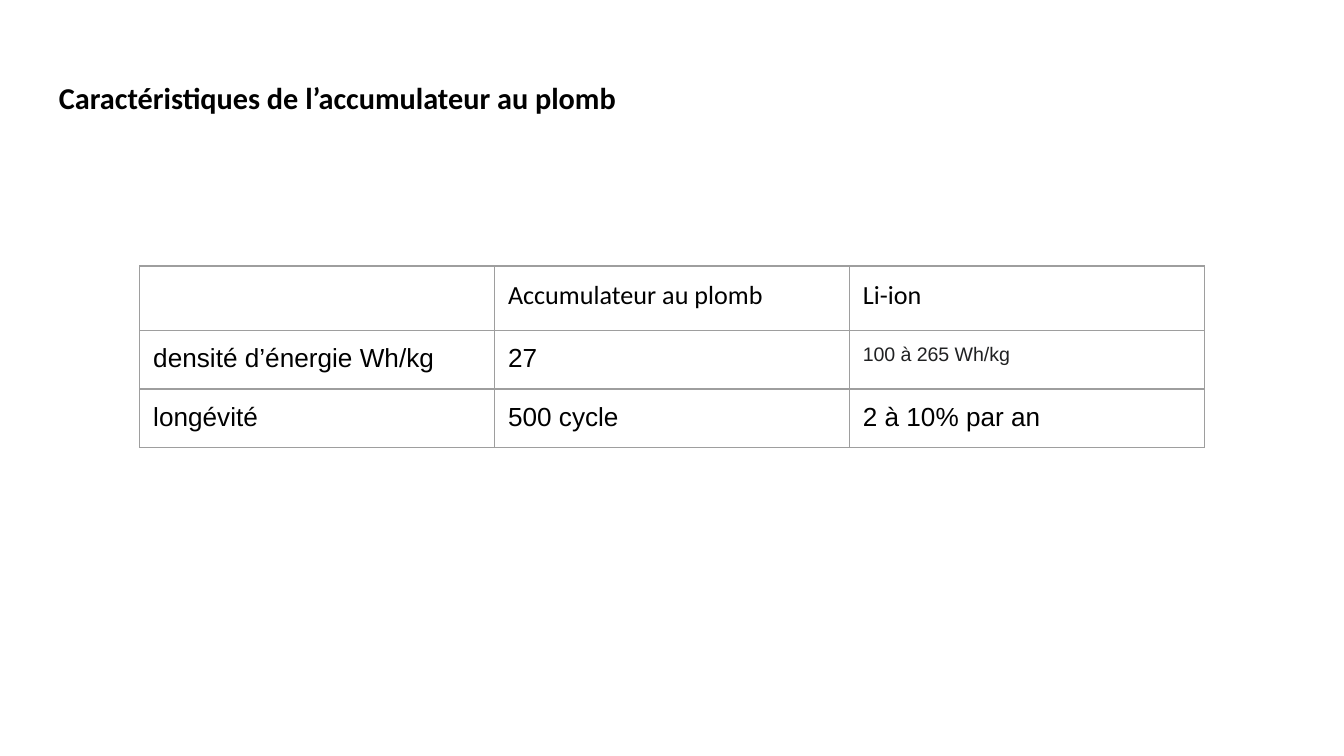
"""Build a slide comparing lead-acid and Li-ion batteries in a table."""
from lxml import etree
from pptx import Presentation, util as u
from pptx.dml.color import RGBColor
from pptx.oxml.ns import qn


def style(paragraph, font_name, size, color="000000", bold=False):
    font = paragraph.font
    font.name, font.size, font.bold = font_name, u.Pt(size), bold
    font.color.rgb = RGBColor.from_string(color)


def add_borders(cell, color="9E9E9E", width=0.75):
    properties = cell._tc.get_or_add_tcPr()
    for side in ("lnL", "lnR", "lnT", "lnB"):
        line = etree.SubElement(properties, qn(f"a:{side}"), w=str(u.Pt(width)))
        fill = etree.SubElement(line, qn("a:solidFill"))
        etree.SubElement(fill, qn("a:srgbClr"), val=color)


presentation = Presentation()
presentation.slide_width = u.Inches(10)
presentation.slide_height = presentation.slide_width * 9 // 16
slide = presentation.slides.add_slide(presentation.slide_layouts[6])
margin = u.Inches(0.1)

title = slide.shapes.add_textbox(u.Inches(0.34), u.Inches(0.49), u.Inches(9.32), u.Inches(0.63))
frame = title.text_frame
frame.word_wrap = True
frame.margin_left = frame.margin_right = frame.margin_top = frame.margin_bottom = margin
frame.text = "Caractéristiques de l’accumulateur au plomb"
style(frame.paragraphs[0], "Calibri", 16.2, bold=True)

rows = [
    ("", "Accumulateur au plomb", "Li-ion"),
    ("densité d’énergie Wh/kg", "27", "100 à 265 Wh/kg"),
    ("longévité", "500 cycle", "2 à 10% par an"),
]
row_heights = (0.48, 0.42, 0.42)
column_width = 2.64
table = slide.shapes.add_table(
    len(rows), len(rows[0]), u.Inches(1.04), u.Inches(1.98),
    u.Inches(column_width * len(rows[0])), u.Inches(sum(row_heights))).table
table.first_row = table.horz_banding = False
for column in table.columns:
    column.width = u.Inches(column_width)

for row_index, (values, height) in enumerate(zip(rows, row_heights)):
    table.rows[row_index].height = u.Inches(height)
    for column_index, value in enumerate(values):
        cell = table.cell(row_index, column_index)
        cell.margin_left = cell.margin_right = cell.margin_top = cell.margin_bottom = margin
        add_borders(cell)
        cell.fill.background()
        paragraph = cell.text_frame.paragraphs[0]
        if value:
            paragraph.text = value
            style(paragraph, "Arial" if row_index else "Calibri", 14)
        else:
            etree.SubElement(paragraph._p, qn("a:endParaRPr"), sz="1400")

density = table.cell(1, 2).text_frame.paragraphs[0]
style(density, "Arial", 10.5, "202122")

presentation.save("out.pptx")
